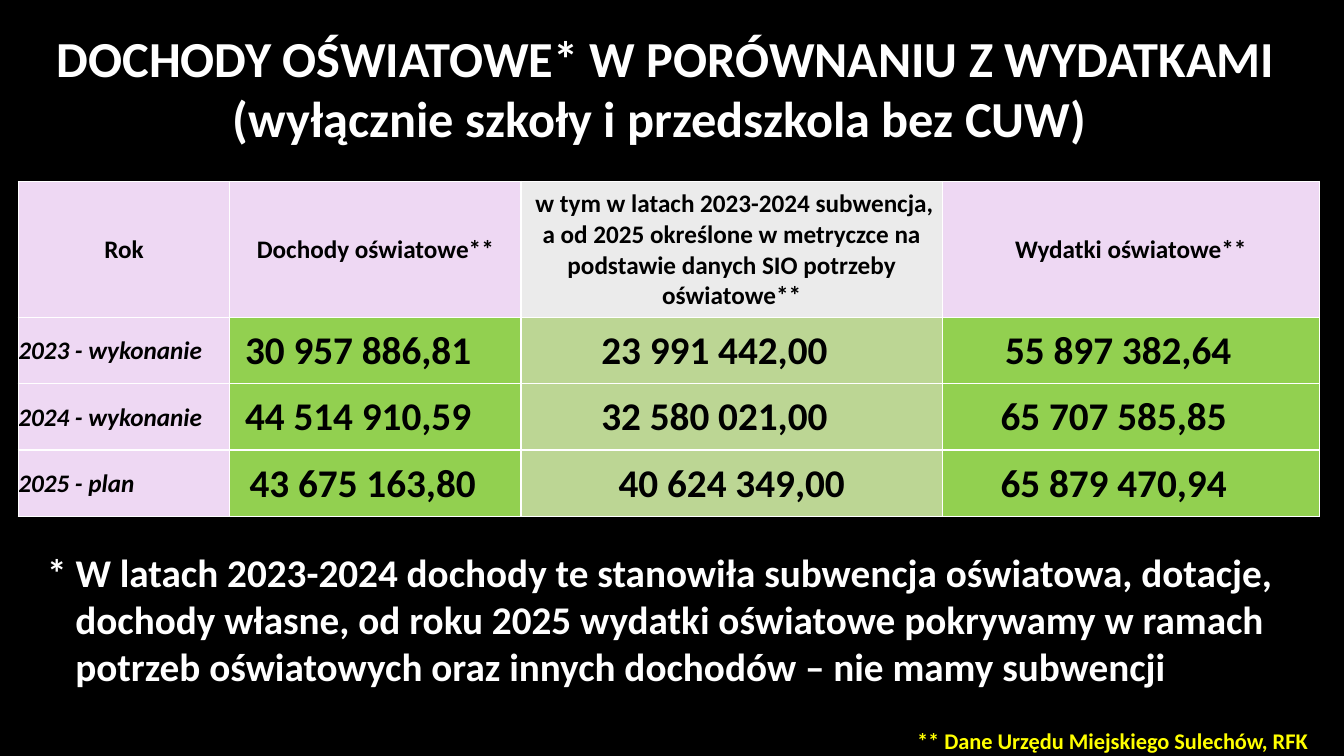
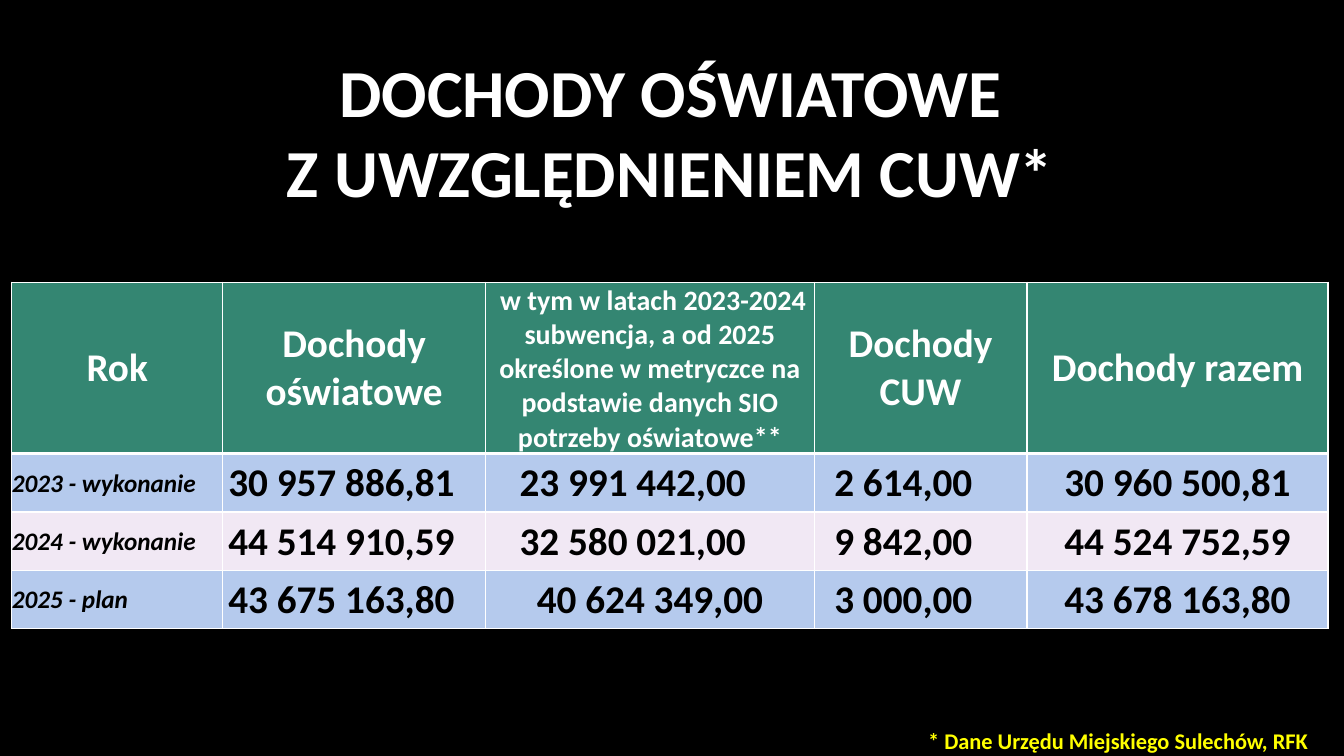
from lxml import etree
from pptx import Presentation
from pptx.dml.color import RGBColor
from pptx.enum.text import MSO_ANCHOR, PP_ALIGN
from pptx.oxml.ns import qn
from pptx.util import Cm, Pt

LEFT, CENTER = PP_ALIGN.LEFT, PP_ALIGN.CENTER
RIGHT, JUSTIFY = PP_ALIGN.RIGHT, PP_ALIGN.JUSTIFY
TOP, MIDDLE = MSO_ANCHOR.TOP, MSO_ANCHOR.MIDDLE

COLORS = {
    "black": "000000",
    "white": "FFFFFF",
    "yellow": "FFFF00",
    "lilac": "EED8F3",
    "grey": "EBEBEB",
    "green": "92D050",
    "pale green": "BCD694",
    "teal": "348672",
    "blue": "B5CAED",
    "pale pink": "F1E8F4",
}
FONT = "Calibri"
INSET = 0.03
NONE, NARROW, WIDE = INSET, 0.67, 0.9

YEARS = ["2023 - wykonanie", "2024 - wykonanie", "2025 - plan"]
INCOME = ["30 957 886,81", "44 514 910,59", "43 675 163,80"]
SUBSIDY = ["23 991 442,00", "32 580 021,00", "40 624 349,00"]
SPENDING = ["55 897 382,64", "65 707 585,85", "65 879 470,94"]
CUW_INCOME = ["2 614,00", "9 842,00", "3 000,00"]
TOTAL = ["30 960 500,81", "44 524 752,59", "43 678 163,80"]
SUBSIDY_HEADING = (
    " w tym w latach 2023-2024 subwencja, a od 2025 określone w metryczce "
    "na podstawie danych SIO potrzeby oświatowe**"
)


class Report:
    """Builds black slides with a title, a table of amounts and footnotes."""

    def __init__(self):
        self.deck = Presentation()
        self.deck.slide_width, self.deck.slide_height = Cm(33.87), Cm(19.05)
        self.page = None

    def new_page(self):
        self.page = self.deck.slides.add_slide(self.deck.slide_layouts[6])
        fill = self.page.background.fill
        fill.solid()
        fill.fore_color.rgb = RGBColor.from_string(COLORS["black"])

    def style(self, para, size, color, align, italic=False):
        para.alignment = align
        for span in para.runs:
            font = span.font
            font.name, font.size = FONT, Pt(size)
            font.bold, font.italic = True, italic
            font.color.rgb = RGBColor.from_string(COLORS[color])

    def text(self, content, place, size, color="white", align=CENTER,
             anchor=TOP, hanging=0):
        box = self.page.shapes.add_textbox(*map(Cm, place))
        frame = box.text_frame
        frame.word_wrap = True
        frame.vertical_anchor = anchor
        frame.text = content
        for index, para in enumerate(frame.paragraphs):
            self.style(para, size, color, align)
            if hanging and index:
                properties = para._p.get_or_add_pPr()
                properties.set("marL", str(Cm(hanging)))
                properties.set("indent", "0")

    def title(self, content, place, size):
        self.text(content, place, size, anchor=MIDDLE)

    def source(self, content):
        self.text(content, (21.23, 18.21, 11.99, 0.94), 16, "yellow", RIGHT)

    def borders(self, cell, top, bottom):
        properties = cell._tc.get_or_add_tcPr()
        sides = {"a:lnL": 1, "a:lnR": 1, "a:lnT": top, "a:lnB": bottom}
        for tag, width in sides.items():
            line = etree.SubElement(properties, qn(tag), w=str(Pt(width)))
            fill = etree.SubElement(line, qn("a:solidFill"))
            etree.SubElement(fill, qn("a:srgbClr"), val=COLORS["white"])

    def cell(self, cell, content, fill, size, color="black", align=CENTER,
             italic=False, left=INSET, right=INSET, top=1, bottom=1):
        self.borders(cell, top, bottom)
        cell.fill.solid()
        cell.fill.fore_color.rgb = RGBColor.from_string(COLORS[fill])
        cell.vertical_anchor = MIDDLE
        cell.margin_left, cell.margin_right = Cm(left), Cm(right)
        cell.margin_top, cell.margin_bottom = Cm(INSET), 0
        para = cell.text_frame.paragraphs[0]
        para.text = content
        self.style(para, size, color, align, italic)

    def table(self, origin, widths, heights, headings, heading_color,
              rule, amounts, shifts, fills):
        """Draws headings as (text, size, fill), then one row per year."""
        frame = self.page.shapes.add_table(
            len(YEARS) + 1, len(widths), *map(Cm, origin),
            Cm(sum(widths)), Cm(heights[0] + len(YEARS) * heights[1]))
        table = frame.table
        for column, width in zip(table.columns, widths):
            column.width = Cm(width)
        for index, row in enumerate(table.rows):
            row.height = Cm(heights[min(index, 1)])
        for column, (content, size, fill) in enumerate(headings):
            self.cell(table.cell(0, column), content, fill, size,
                      heading_color, bottom=rule)
        for row, year in enumerate(YEARS):
            top = 1 if row else rule
            self.cell(table.cell(row + 1, 0), year, fills[row][0], 18,
                      align=LEFT, italic=True, left=0, right=0, top=top)
            for column, values in enumerate(amounts):
                self.cell(table.cell(row + 1, column + 1), values[row],
                          fills[row][column + 1], 28,
                          right=shifts[column][row], top=top)


def main():
    report = Report()

    report.new_page()
    report.title("DOCHODY OŚWIATOWE* W PORÓWNANIU Z WYDATKAMI\n"
                 "(wyłącznie szkoły i przedszkola bez CUW) ",
                 (0, 0.3, 33.55, 3.81), 36)
    report.table(
        (0.46, 4.57), [5.33, 7.34, 10.62, 9.5], (3.43, 1.67),
        [("Rok", 18, "lilac"), ("Dochody oświatowe**", 18, "lilac"),
         (SUBSIDY_HEADING, 18, "grey"), ("Wydatki oświatowe**", 18, "lilac")],
        "black", 1, [INCOME, SUBSIDY, SPENDING],
        [(WIDE, WIDE, NARROW), (WIDE, WIDE, NONE), (NARROW, WIDE, WIDE)],
        [["lilac", "green", "pale green", "green"]] * len(YEARS))
    report.source("** Dane Urzędu Miejskiego Sulechów, RFK")
    report.text(
        "* W latach 2023-2024 dochody te stanowiła subwencja oświatowa, dotacje,\n"
        "dochody własne, od roku 2025 wydatki oświatowe pokrywamy w ramach\n"
        "potrzeb oświatowych oraz innych dochodów – nie mamy subwencji",
        (0.94, 13.69, 31.8, 3.84), 28, align=JUSTIFY, hanging=0.71)

    report.new_page()
    report.title("DOCHODY OŚWIATOWE\nZ UWZGLĘDNIENIEM CUW*",
                 (0.3, 0, 33.2, 6.58), 48)
    report.table(
        (0.3, 7.11), [5.31, 6.63, 8.28, 5.36, 7.59], (4.32, 1.47),
        [("Rok", 28, "teal"), ("Dochody oświatowe", 28, "teal"),
         (SUBSIDY_HEADING, 20, "teal"), ("Dochody CUW", 28, "teal"),
         ("Dochody razem", 28, "teal")],
        "white", 3, [INCOME, SUBSIDY, CUW_INCOME, TOTAL],
        [(NARROW,) * 3, (WIDE, WIDE, NONE), (WIDE,) * 3, (NONE,) * 3],
        [[fill] * 5 for fill in ("blue", "pale pink", "blue")])
    report.source("* Dane Urzędu Miejskiego Sulechów, RFK")

    report.deck.save("out.pptx")


if __name__ == "__main__":
    main()
